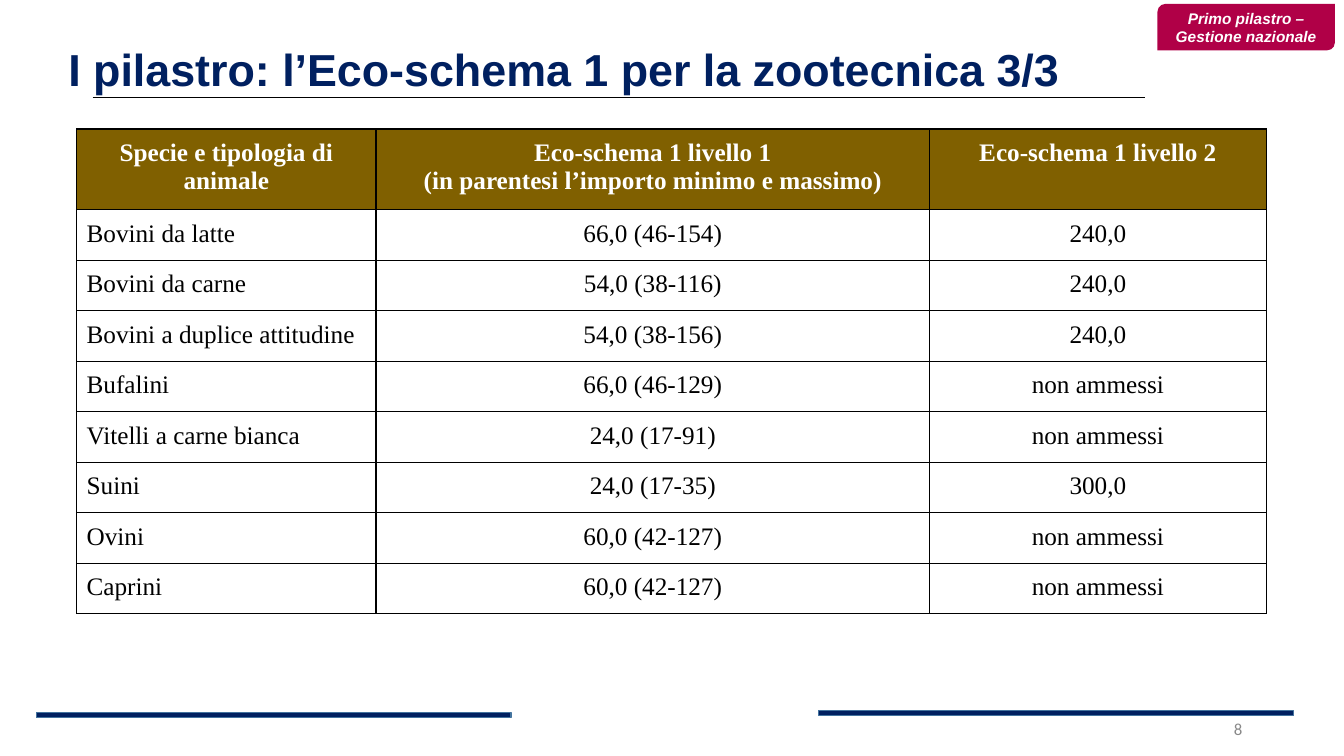
from lxml import etree
from pptx import Presentation
from pptx.dml.color import RGBColor
from pptx.enum.shapes import MSO_CONNECTOR, MSO_SHAPE
from pptx.enum.text import MSO_ANCHOR, PP_ALIGN
from pptx.oxml.ns import qn
from pptx.util import Inches, Pt

LEFT, MID, RIGHT = PP_ALIGN.LEFT, PP_ALIGN.CENTER, PP_ALIGN.RIGHT
TOP, CENTER = MSO_ANCHOR.TOP, MSO_ANCHOR.MIDDLE
RECT, BADGE = MSO_SHAPE.RECTANGLE, MSO_SHAPE.ROUND_2_DIAG_RECTANGLE
LINE = MSO_CONNECTOR.STRAIGHT
WIDE, HIGH = Inches(13.33), Inches(7.5)
GRID = 100
NAVY, BROWN, WHITE, BLACK = "002060", "806000", "FFFFFF", "000000"
SHARES = (2.97, 5.49, 3.34)
HEIGHTS = (8,) + (5,) * 8
ROWS = (
    ("Specie e tipologia di animale",
     "Eco-schema 1 livello 1\n(in parentesi l’importo minimo e massimo)",
     "Eco-schema 1 livello 2"),
    ("Bovini da latte", "66,0 (46-154)", "240,0"),
    ("Bovini da carne", "54,0 (38-116)", "240,0"),
    ("Bovini a duplice attitudine", "54,0 (38-156)", "240,0"),
    ("Bufalini", "66,0 (46-129)", "non ammessi"),
    ("Vitelli a carne bianca", "24,0 (17-91)", "non ammessi"),
    ("Suini", "24,0 (17-35)", "300,0"),
    ("Ovini", "60,0 (42-127)", "non ammessi"),
    ("Caprini", "60,0 (42-127)", "non ammessi"),
)


def color(code):
    """Turn a hex string into a colour."""
    return RGBColor.from_string(code)


def place(col, row, cols, rows):
    """Turn grid columns and rows into a box on the slide."""
    return (int(WIDE * col / GRID), int(HIGH * row / GRID),
            int(WIDE * cols / GRID), int(HIGH * rows / GRID))


def write(frame, text, align, size, face, code, **style):
    """Write lines of text in one format."""
    form = {"size": Pt(size), "name": face, **style}
    frame.word_wrap = True
    for num, line in enumerate(text.split("\n")):
        para = frame.add_paragraph() if num else frame.paragraphs[0]
        para.alignment = align
        run = para.add_run()
        run.text = line
        run.font.color.rgb = color(code)
        for key, value in form.items():
            setattr(run.font, key, value)


def label(slide, box, anchor, *form, **style):
    """Add a text box."""
    frame = slide.shapes.add_textbox(*box).text_frame
    frame.vertical_anchor = anchor
    write(frame, *form, **style)


def block(slide, kind, box, fill, edge=None):
    """Add a filled shape with an optional edge."""
    shape = slide.shapes.add_shape(kind, *box)
    shape.shadow.inherit = False
    shape.fill.solid()
    shape.fill.fore_color.rgb = color(fill)
    if edge:
        shape.line.color.rgb = color(edge)
        shape.line.width = Pt(1)
    else:
        shape.line.fill.background()
    return shape


def header(slide, box):
    """Place the title, its rule and the badge across the top band."""
    left, top, cols, rows = box
    label(slide, place(left + 4.35, top + 4.8, 90.7, 8.53), TOP,
          "I pilastro: l’Eco-schema 1 per la zootecnica 3/3",
          LEFT, 32, "Arial", NAVY, bold=True)
    x, y, width, _ = place(left + 6.9, top + rows, 78.32, 0)
    rule = slide.shapes.add_connector(LINE, x, y, x + width, y)
    rule.line.color.rgb = color(BLACK)
    rule.line.width = Pt(0.5)
    etree.SubElement(rule._element.spPr, qn("a:effectLst"))
    badge = block(slide, BADGE, place(left + cols - 13.88, top + 0.53, 13.2, 6.13), "B00047")
    badge.text_frame.vertical_anchor = CENTER
    write(badge.text_frame, "Primo pilastro – Gestione nazionale",
          MID, 11, "Arial", WHITE, bold=True, italic=True)


def border(cell):
    """Draw a thin black line on each side of a cell."""
    props = cell._tc.get_or_add_tcPr()
    for side in ("lnL", "lnR", "lnT", "lnB"):
        line = etree.SubElement(props, qn(f"a:{side}"), w=str(Pt(1)))
        fill = etree.SubElement(line, qn("a:solidFill"))
        etree.SubElement(fill, qn("a:srgbClr"), val=BLACK)


def rates(slide, box):
    """Place the table of payments by animal type."""
    _, _, width, height = area = place(*box)
    table = slide.shapes.add_table(len(ROWS), len(SHARES), *area).table
    table.horz_banding = False
    for col, share in zip(table.columns, SHARES):
        col.width = int(width * share / sum(SHARES))
    for row, share in zip(table.rows, HEIGHTS):
        row.height = int(height * share / sum(HEIGHTS))
    pads = dict.fromkeys(("margin_left", "margin_right", "margin_top", "margin_bottom"),
                         Inches(0.1))
    for r, texts in enumerate(ROWS):
        head = r == 0
        for c, text in enumerate(texts):
            cell = table.cell(r, c)
            for key, value in pads.items():
                setattr(cell, key, value)
            border(cell)
            cell.fill.solid()
            cell.fill.fore_color.rgb = color(BROWN if head else WHITE)
            write(cell.text_frame, text, MID if head or c else LEFT, 18,
                  "Times New Roman", WHITE if head else BLACK, bold=head)


def footer(slide, box):
    """Place the two bars and the page number along the bottom band."""
    left, top, _, _ = box
    for col, row in ((60.92, 0.27), (2.7, 0.54)):
        block(slide, RECT, place(left + col, top + row, 35.33, 0.67), NAVY, "43739E")
    label(slide, place(left + 70.67, top, 22.5, 5.33), CENTER,
          "8", RIGHT, 12, "Calibri", "898989")


def main():
    """Build and save the slide."""
    deck = Presentation()
    deck.slide_width, deck.slide_height = WIDE, HIGH
    slide = deck.slides.add_slide(deck.slide_layouts[6])
    footer(slide, (0, 93.73, GRID, 6.27))
    rates(slide, (5.7, 17.07, 88.52, 64.13))
    header(slide, (0, 0, GRID, 12.93))
    deck.save("out.pptx")


if __name__ == "__main__":
    main()
